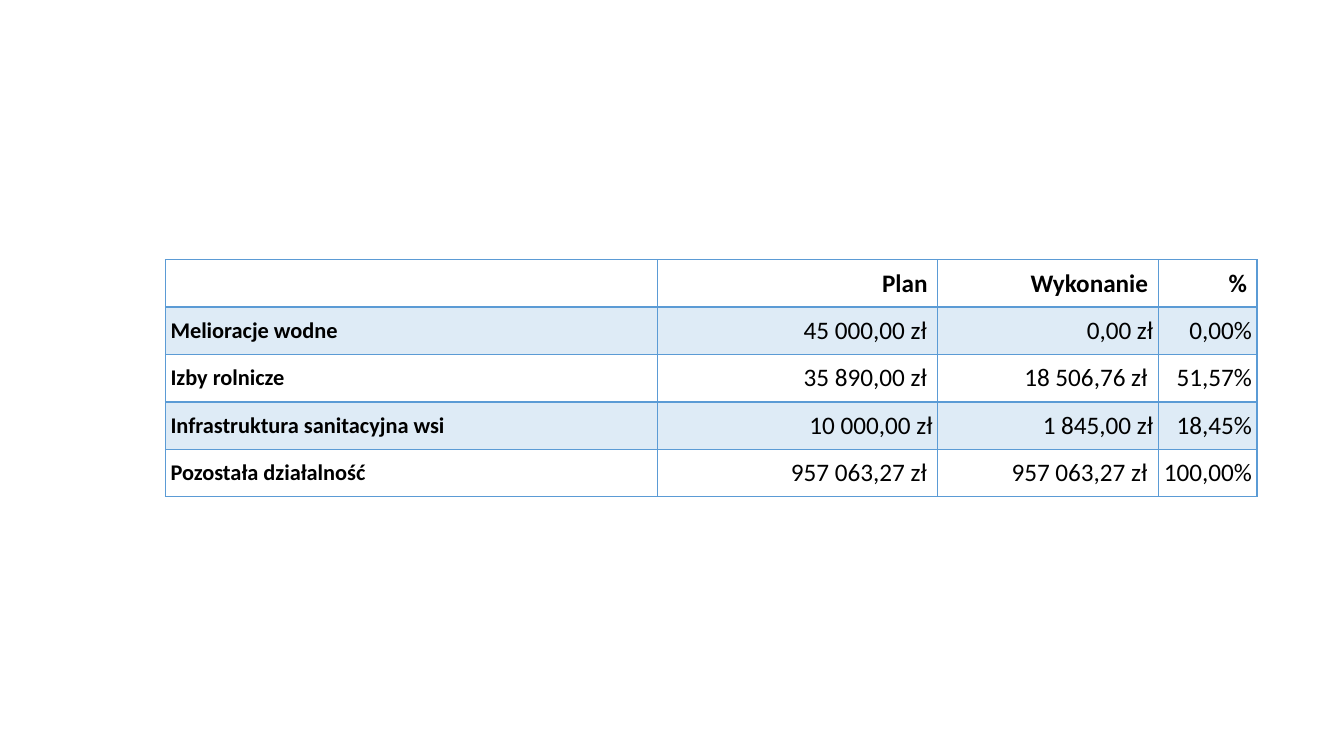
from dataclasses import dataclass

from lxml import etree
from pptx import Presentation
from pptx.dml.color import RGBColor
from pptx.enum.text import MSO_ANCHOR, PP_ALIGN
from pptx.oxml.ns import qn
from pptx.table import _Cell
from pptx.util import Pt

LEFT, RIGHT = PP_ALIGN.LEFT, PP_ALIGN.RIGHT
MIDDLE = MSO_ANCHOR.MIDDLE
BLACK = RGBColor(0x00, 0x00, 0x00)
BLUE = RGBColor(0x5B, 0x9B, 0xD5)
FONT = "Calibri"
TINT = 20  # opacity of the shaded rows, in percent
WIDTHS = (351.4, 200.2, 157.6, 70.6)
HEIGHT = 33.85


@dataclass(frozen=True)
class Entry:
    label: str
    plan: str
    done: str
    share: str

    def texts(self) -> tuple[str, ...]:
        return self.label, self.plan, self.done, self.share


ENTRIES = (
    Entry("", "Plan", "Wykonanie", "%"),
    Entry("Melioracje wodne", "45 000,00 zł ", "0,00 zł", "0,00%"),
    Entry("Izby rolnicze", "35 890,00 zł ", "18 506,76 zł ", "51,57%"),
    Entry("Infrastruktura sanitacyjna wsi", "10 000,00 zł", "1 845,00 zł", "18,45%"),
    Entry("Pozostała działalność", "957 063,27 zł ", "957 063,27 zł ", "100,00%"),
)


def add_edges(cell: _Cell, top: float, bottom: float) -> None:
    props = cell._tc.get_or_add_tcPr()
    for side, width in (("L", 1), ("R", 1), ("T", top), ("B", bottom)):
        line = etree.SubElement(props, qn(f"a:ln{side}"), w=str(Pt(width)))
        fill = etree.SubElement(line, qn("a:solidFill"))
        etree.SubElement(fill, qn("a:srgbClr"), val=str(BLUE))


def shade(cell: _Cell) -> None:
    cell.fill.solid()
    cell.fill.fore_color.rgb = BLUE
    color = cell._tc.tcPr.find(qn("a:solidFill")).find(qn("a:srgbClr"))
    etree.SubElement(color, qn("a:alpha"), val=str(TINT * 1000))


def fill_cell(cell: _Cell, text: str, row: int, col: int) -> None:
    head, label = row == 0, col == 0
    # Borders and background
    add_edges(cell, top=2 if row == 1 else 1, bottom=2 if head else 1)
    if row % 2:
        shade(cell)
    else:
        cell.fill.background()
    # Layout
    cell.vertical_anchor = MIDDLE
    cell.margin_left = cell.margin_right = Pt(7.2 if head else 3.6)
    cell.margin_top = cell.margin_bottom = Pt(3.6)
    # Text
    if not text:
        return
    para = cell.text_frame.paragraphs[0]
    para.alignment = LEFT if label else RIGHT
    run = para.add_run()
    run.text = text
    font = run.font
    font.name, font.size = FONT, Pt(16 if label else 18)
    font.bold = head or label
    font.color.rgb = BLACK


def main() -> None:
    deck = Presentation()
    deck.slide_width, deck.slide_height = Pt(960), Pt(540)
    slide = deck.slides.add_slide(deck.slide_layouts[6])

    # Budget table
    frame = slide.shapes.add_table(
        len(ENTRIES), len(WIDTHS), Pt(118.2), Pt(185.6),
        Pt(sum(WIDTHS)), Pt(HEIGHT * len(ENTRIES)))
    table = frame.table
    table.first_row = table.horz_banding = False
    for col, width in enumerate(WIDTHS):
        table.columns[col].width = Pt(width)
    for row, entry in enumerate(ENTRIES):
        table.rows[row].height = Pt(HEIGHT)
        for col, text in enumerate(entry.texts()):
            fill_cell(table.cell(row, col), text, row, col)

    deck.save("out.pptx")


if __name__ == "__main__":
    main()
